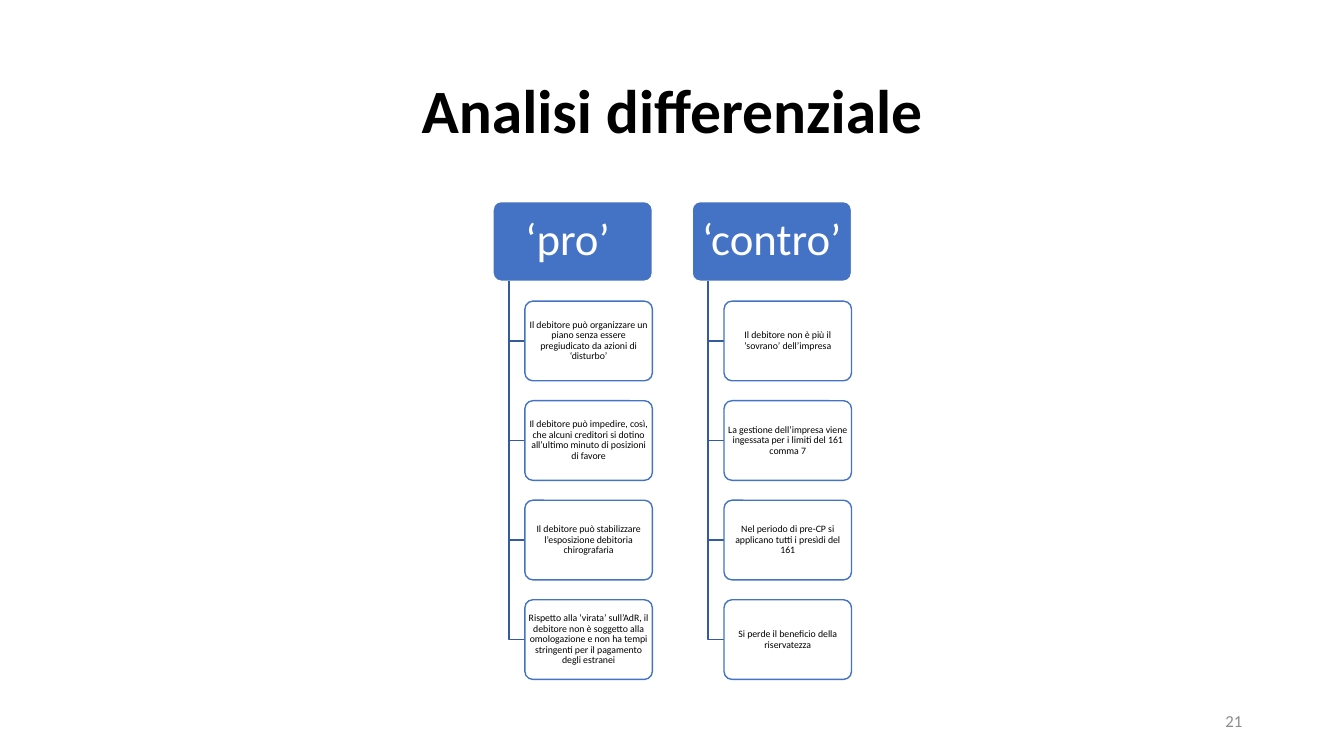
from pptx import Presentation
from pptx.dml.color import RGBColor
from pptx.enum.shapes import MSO_SHAPE
from pptx.enum.text import MSO_ANCHOR, PP_ALIGN
from pptx.oxml.ns import qn
from pptx.util import Inches, Pt
from lxml import etree

ROUNDED = MSO_SHAPE.ROUNDED_RECTANGLE
MIDDLE = MSO_ANCHOR.MIDDLE
CENTER, RIGHT = PP_ALIGN.CENTER, PP_ALIGN.RIGHT

BLACK = RGBColor(0x00, 0x00, 0x00)
WHITE = RGBColor(0xFF, 0xFF, 0xFF)
BLUE = RGBColor(0x44, 0x72, 0xC4)
DARK_BLUE = RGBColor(0x36, 0x5B, 0x9D)
GRAY = RGBColor(0x8C, 0x8C, 0x8C)

FONT = "Calibri"
STEP = 1.25  # distance between neighbours, in box sizes
HEAD_WIDTH, BOX_HEIGHT = 1.58, 0.79

ARGUMENTS = {
    "‘pro’ ": [
        "Il debitore può organizzare un piano senza essere pregiudicato da azioni di ‘disturbo’",
        "Il debitore può impedire, così, che alcuni creditori si dotino all’ultimo minuto di posizioni di favore",
        "Il debitore può stabilizzare l’esposizione debitoria chirografaria",
        "Rispetto alla ‘virata’ sull’AdR, il debitore non è soggetto alla omologazione e non ha tempi "
        "stringenti per il pagamento degli estranei",
    ],
    "‘contro’": [
        "Il debitore non è più il ‘sovrano’ dell’impresa",
        "La gestione dell’impresa viene ingessata per i limiti del 161 comma 7",
        "Nel periodo di pre-CP si applicano tutti i presìdi del 161",
        "Si perde il beneficio della riservatezza",
    ],
}


def write(shape, text, size, color, align=CENTER, spacing=0.9, bold=False, inset=(0.1, 0.05)):
    frame = shape.text_frame
    frame.text = text
    frame.word_wrap = True
    frame.vertical_anchor = MIDDLE
    frame.margin_left = frame.margin_right = Inches(inset[0])
    frame.margin_top = frame.margin_bottom = Inches(inset[1])
    para = frame.paragraphs[0]
    para.alignment = align
    para.line_spacing = spacing
    font = para.runs[0].font
    font.name, font.size, font.bold = FONT, Pt(size), bold
    font.color.rgb = color


def add_label(page, box, text, size, color, **style):
    label = page.shapes.add_textbox(*map(Inches, box))
    write(label, text, size, color, **style)


def add_card(page, box, fill, line):
    card = page.shapes.add_shape(ROUNDED, *map(Inches, box))
    card.adjustments[0] = 0.1
    card.shadow.inherit = False
    card.fill.solid()
    card.fill.fore_color.rgb = fill
    card.line.color.rgb = line
    card.line.width = Pt(1)
    return card


def add_branch(page, trunk, top, right, bottom):
    """Elbow from the heading down the trunk and across to an argument."""
    builder = page.shapes.build_freeform(Inches(trunk), Inches(top))
    builder.add_line_segments(
        [(Inches(trunk), Inches(bottom)), (Inches(right), Inches(bottom))], close=False)
    branch = builder.convert_to_shape()
    branch.shadow.inherit = False
    branch.fill.background()
    branch.line.color.rgb = DARK_BLUE
    branch.line.width = Pt(1)


def add_column(page, box, heading, arguments):
    left, top, width, height = box
    head = add_card(page, box, BLUE, WHITE)
    write(head, heading, 32, WHITE, inset=(0.07, 0.04))

    trunk, indent = left + 0.1 * width, left + 0.2 * width
    for row, argument in enumerate(arguments, start=1):
        card_top = top + row * STEP * height
        add_branch(page, trunk, top + height, indent, card_top + height / 2)
        card = add_card(page, (indent, card_top, 0.8 * width, height), WHITE, BLUE)
        color = card.fill._xPr.find(qn("a:solidFill"))[0]
        etree.SubElement(color, qn("a:alpha")).set("val", "90000")
        write(card, argument, 7, BLACK, inset=(0.01, 0.01))


def add_comparison(page, left, top):
    for column, (heading, arguments) in enumerate(ARGUMENTS.items()):
        column_left = left + column * STEP * HEAD_WIDTH
        add_column(page, (column_left, top, HEAD_WIDTH, BOX_HEIGHT), heading, arguments)


def main():
    deck = Presentation()
    deck.slide_width, deck.slide_height = Inches(13.33), Inches(7.5)
    page = deck.slides.add_slide(deck.slide_layouts[6])

    # Title, comparison and page number
    add_label(page, (0.92, 0.4, 11.5, 1.45), "Analisi differenziale", 44, BLACK, bold=True)
    add_comparison(page, 4.89, 2)
    add_label(page, (9.42, 6.95, 3, 0.4), "21", 12, GRAY, align=RIGHT, spacing=1.0)

    deck.save("out.pptx")


if __name__ == "__main__":
    main()
